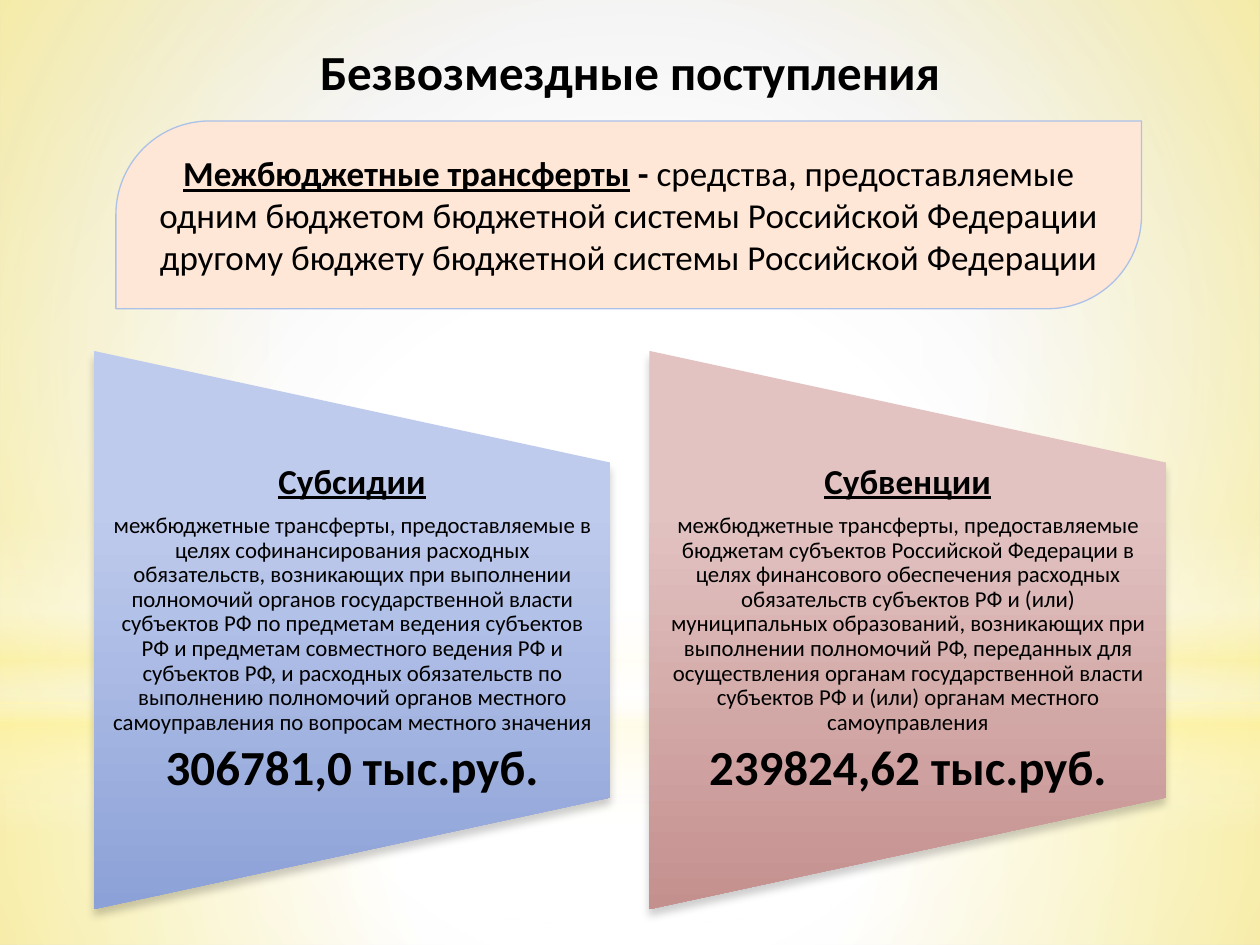
from dataclasses import dataclass

from lxml import etree
from pptx import Presentation, util as u
from pptx.dml.color import RGBColor
from pptx.enum import shapes, text
from pptx.oxml.ns import qn

CELL = u.Inches(0.1)
COLS, ROWS = 100, 75


@dataclass(frozen=True)
class Theme:
    """Colours, type sizes and gradients of the slide."""
    font: str = "Calibri"
    ink: str = "000000"
    panel: str = "FFE7D7"
    panel_line: str = "ACC1E8"
    title: int = 28
    lead: int = 20
    body: int = 13
    backdrop: tuple = ((0, "FFFFFF", 100), (42, "FFFFFF", 100), (100, "D1D1D1", 100))
    floor: tuple = ((0, "FFFFFF", 91), (37, "FFFFFF", 76), (100, "FFF39D", 79))
    wall: tuple = ((0, "FFFFFF", 89), (48, "FFFFFF", 62), (100, "FFF39D", 79))
    horizon: tuple = ((0, "FFFFFF", 0), (29, "FFFFFF", 30), (45, "FFF39D", 40),
                      (55, "FFFFFF", 26), (65, "FFF39D", 60), (100, "FFFFFF", 0))
    glow: tuple = ((0, "FFFFFF", 100), (56, "FFFFFF", 0))
    blue: tuple = ((28, "BFCBED", 100), (100, "8CA1D7", 100))
    rose: tuple = ((28, "E2C3C2", 100), (100, "C4908E", 100))


T = Theme()
CENTRE = (50, 50, 50, 50)


def emu(box):
    """Turn a box in grid cells into lengths."""
    return [u.Emu(round(v * CELL)) for v in box]


def add(parent, name, **attrs):
    """Append a DrawingML element with the given attributes."""
    return etree.SubElement(parent, qn(name), {k: str(v) for k, v in attrs.items()})


def shade(props, stops, focus=None):
    """Replace a solid fill by a circular gradient, or a vertical one without focus."""
    solid = props.find(qn("a:solidFill"))
    grad = etree.Element(qn("a:gradFill"), rotWithShape="0")
    props.replace(solid, grad)
    gs_list = add(grad, "a:gsLst")
    for pos, colour, alpha in stops:
        clr = add(add(gs_list, "a:gs", pos=pos * 1000), "a:srgbClr", val=colour)
        if alpha < 100:
            add(clr, "a:alpha", val=alpha * 1000)
    if focus:
        path = add(grad, "a:path", path="circle")
        add(path, "a:fillToRect", **{k: v * 1000 for k, v in zip("ltrb", focus)})
    else:
        add(grad, "a:lin", ang=90 * 60000, scaled=0)


def add_shape(slide, kind, box, stops=None, focus=None):
    """Add a shape without line or shadow, with a gradient if stops are given."""
    sp = slide.shapes.add_shape(kind, *emu(box))
    sp.shadow.inherit = False
    sp.line.fill.background()
    sp.fill.solid()
    if stops:
        shade(sp._element.spPr, stops, focus)
    return sp


def set_font(font, size, bold=False, underline=False):
    """Set the typeface, size and weight of a paragraph or run."""
    font.name, font.size = T.font, u.Pt(size)
    font.bold, font.underline = bold, underline
    font.color.rgb = RGBColor.from_string(T.ink)


def add_backdrop(slide, box):
    """Fill the background and lay the tinted light over the box."""
    x, y, w, h = box
    slide.background.fill.solid()
    shade(slide._element.find(".//" + qn("p:bgPr")), T.backdrop, (24, 44, 24, 12))
    split = 55.8
    rect, oval = shapes.MSO_SHAPE.RECTANGLE, shapes.MSO_SHAPE.OVAL
    add_shape(slide, rect, (x, y + split, w, h - split), T.floor, CENTRE)
    add_shape(slide, rect, (x, y, w, split), T.wall, CENTRE)
    add_shape(slide, rect, (x, y + 41.2, w, h / 3), T.horizon)
    add_shape(slide, oval, (x, y + 17.5, w, split), T.glow, CENTRE)


def add_title(slide, box, title):
    """Write the slide title in the box."""
    tf = slide.shapes.add_textbox(*emu(box)).text_frame
    tf.word_wrap = False
    p = tf.paragraphs[0]
    p.text, p.alignment = title, text.PP_ALIGN.CENTER
    set_font(p.font, T.title, bold=True)


def add_definition(slide, box, term, meaning):
    """Draw the definition panel with its underlined term."""
    sp = add_shape(slide, shapes.MSO_SHAPE.ROUND_2_DIAG_RECTANGLE, box)
    sp.adjustments[0], sp.adjustments[1] = 0.5, 0
    sp.fill.fore_color.rgb = RGBColor.from_string(T.panel)
    sp.line.color.rgb = RGBColor.from_string(T.panel_line)
    sp.line.width = u.Pt(0.75)
    tf = sp.text_frame
    tf.word_wrap, tf.vertical_anchor = True, text.MSO_ANCHOR.MIDDLE
    p = tf.paragraphs[0]
    p.alignment = text.PP_ALIGN.CENTER
    for words, bold, underline in ((term, True, True), (" - ", True, False),
                                   (meaning, False, False)):
        r = p.add_run()
        r.text = words
        set_font(r.font, T.lead, bold, underline)


def add_card(slide, box, stops, heading, body, amount):
    """Draw a tapered card with heading, explanation and amount."""
    x, y, w, h = box
    turned = (x + (w - h) / 2, y + (h - w) / 2, h, w)
    sp = add_shape(slide, shapes.MSO_SHAPE.FLOWCHART_MANUAL_OPERATION, turned, stops)
    sp.rotation = 270
    effects = sp._element.spPr.find(qn("a:effectLst"))
    shadow = add(effects, "a:outerShdw", blurRad=u.Pt(5), dist=u.Pt(4),
                 dir=90 * 60000, rotWithShape=0)
    add(add(shadow, "a:srgbClr", val=T.ink), "a:alpha", val=20000)

    tf = slide.shapes.add_textbox(*emu((x, y + h * 0.2, w, h * 0.6))).text_frame
    tf.word_wrap, tf.vertical_anchor = True, text.MSO_ANCHOR.MIDDLE
    tf.margin_left = tf.margin_right = u.Inches(0.14)
    tf.margin_top = tf.margin_bottom = 0
    parts = ((heading, T.lead, True, True), (body, T.body, False, False),
             (amount, T.title, True, False))
    for i, (words, size, bold, underline) in enumerate(parts):
        p = tf.add_paragraph() if i else tf.paragraphs[0]
        p.text, p.alignment = words, text.PP_ALIGN.CENTER
        p.line_spacing, p.space_after = 0.9, u.Pt(round(size * 0.35, 1))
        set_font(p.font, size, bold, underline)


CARDS = (
    (T.blue, "Субсидии",
     "межбюджетные трансферты, предоставляемые в целях софинансирования расходных "
     "обязательств, возникающих при выполнении полномочий органов государственной "
     "власти субъектов РФ по предметам ведения субъектов РФ и предметам совместного "
     "ведения РФ и субъектов РФ, и расходных обязательств по выполнению полномочий "
     "органов местного самоуправления по вопросам местного значения",
     "306781,0 тыс.руб."),
    (T.rose, "Субвенции",
     "межбюджетные трансферты, предоставляемые бюджетам субъектов Российской Федерации "
     "в целях финансового обеспечения расходных обязательств субъектов РФ и (или) "
     "муниципальных образований, возникающих при выполнении полномочий РФ, переданных "
     "для осуществления органам государственной власти субъектов РФ и (или) органам "
     "местного самоуправления",
     "239824,62 тыс.руб."),
)


def main():
    """Build and save the slide."""
    prs = Presentation()
    prs.slide_width, prs.slide_height = COLS * CELL, ROWS * CELL
    slide = prs.slides.add_slide(prs.slide_layouts[6])
    add_backdrop(slide, (0, 0, COLS, ROWS))
    add_title(slide, (24.1, 2.8, 51.8, 5.7), "Безвозмездные поступления")
    add_definition(slide, (9.2, 9.6, 81.4, 14.9), "Межбюджетные трансферты",
                   "средства, предоставляемые одним бюджетом бюджетной системы Российской "
                   "Федерации другому бюджету бюджетной системы Российской Федерации")
    width, pitch = 41, 44.1
    left = (COLS - pitch - width) / 2
    for i, card in enumerate(CARDS):
        add_card(slide, (left + i * pitch, 27.85, width, 44.3), *card)
    prs.save("out.pptx")


if __name__ == "__main__":
    main()
